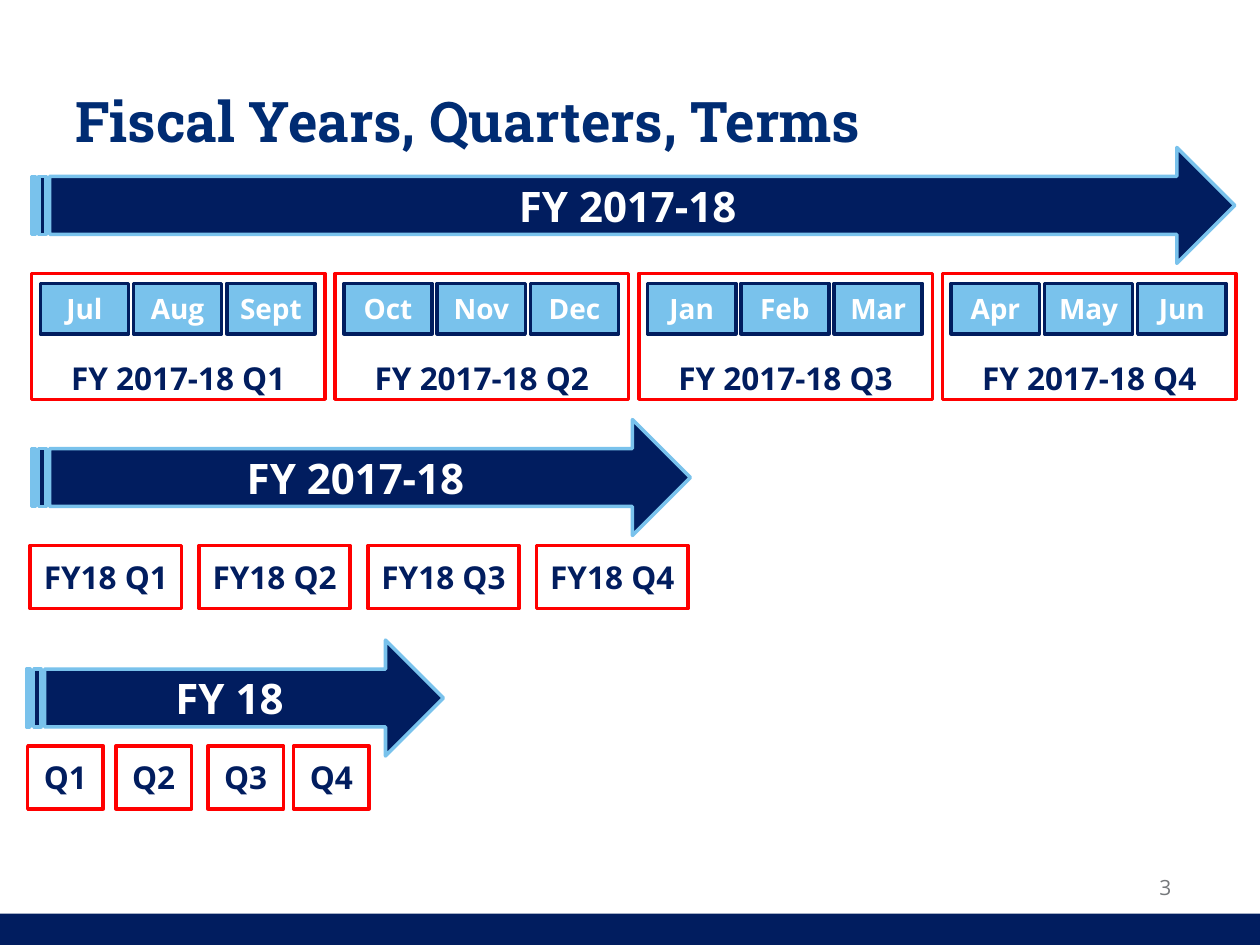
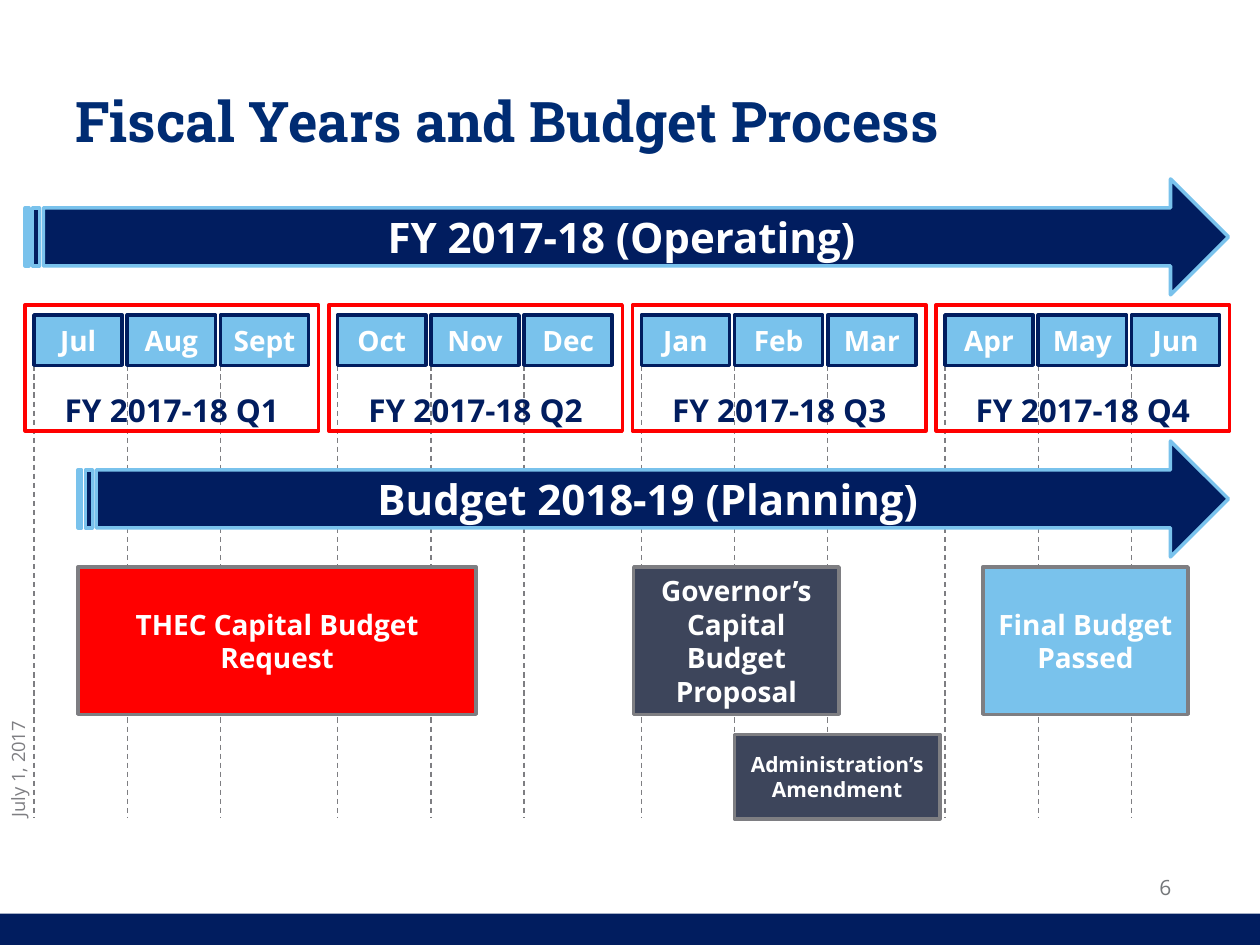
from dataclasses import dataclass

from lxml.etree import SubElement
from pptx import Presentation
from pptx.dml.color import RGBColor as RGB
from pptx.enum.dml import MSO_LINE as Dash
from pptx.enum.shapes import MSO_CONNECTOR as Conn, MSO_SHAPE as Kind
from pptx.enum.text import MSO_ANCHOR as Anchor, PP_ALIGN as Align
from pptx.oxml.ns import qn
from pptx.util import Inches, Pt


@dataclass(frozen=True)
class Theme:
    # Colours
    navy: str = "011D5F"
    title: str = "002C73"
    sky: str = "79C2EC"
    red: str = "FF0000"
    slate: str = "3D455B"
    grey: str = "7E7E82"
    page: str = "75787B"
    white: str = "FFFFFF"
    # Fonts and type sizes
    head: str = "Roboto Slab"
    body: str = "Open Sans"
    title_pt: float = 32
    arrow_pt: float = 24
    label_pt: float = 18
    month_pt: float = 16
    small_pt: float = 12
    date_pt: float = 10.5
    # Line widths
    edge: float = 2
    thin: float = 0.75


T = Theme()
QUARTERS = (
    ("Jul", "Aug", "Sept"),
    ("Oct", "Nov", "Dec"),
    ("Jan", "Feb", "Mar"),
    ("Apr", "May", "Jun"),
)
QUARTER_STEP = 2.41
MONTH_STEP = 0.74
MONTH_INSET = 0.07


def tint(hue):
    return RGB.from_string(hue)


def write(shape, text, size, hue, bold=True, font=T.body,
          align=Align.CENTER, anchor=Anchor.MIDDLE):
    frame = shape.text_frame
    frame.word_wrap = True
    frame.vertical_anchor = anchor
    para = frame.paragraphs[0]
    para.text = text
    para.alignment = align
    para.font.name = font
    para.font.size = Pt(size)
    para.font.bold = bold
    para.font.color.rgb = tint(hue)


def add_text(slide, box, text, size, hue, **style):
    shape = slide.shapes.add_textbox(*map(Inches, box))
    write(shape, text, size, hue, **style)
    return shape


def add_box(slide, box, fill=None, line=None, kind=Kind.RECTANGLE):
    shape = slide.shapes.add_shape(kind, *map(Inches, box))
    shape.shadow.inherit = False
    if fill:
        shape.fill.solid()
        shape.fill.fore_color.rgb = tint(fill)
    else:
        shape.fill.background()
    if line:
        shape.line.color.rgb = tint(line)
        shape.line.width = Pt(T.edge)
    else:
        shape.line.fill.background()
    return shape


def add_arrow(slide, left, top, width, text):
    shape = add_box(slide, (left, top, width, 0.92), T.navy, T.sky,
                    Kind.STRIPED_RIGHT_ARROW)
    write(shape, text, T.arrow_pt, T.white)


def add_label(slide, box, text):
    shape = add_box(slide, box, line=T.red)
    write(shape, text, T.label_pt, T.navy)
    return shape


def add_phase(slide, box, text, fill, size=T.month_pt):
    write(add_box(slide, box, fill, T.grey), text, size, T.white)


def add_dash(slide, x, top, end):
    line = slide.shapes.add_connector(
        Conn.STRAIGHT, *map(Inches, (x, top, x, end)))
    line.line.color.rgb = tint(T.grey)
    line.line.width = Pt(T.thin)
    line.line.dash_style = Dash.DASH
    SubElement(line._element.spPr, qn("a:effectLst"))


def month_x(left, quarter, month):
    return left + MONTH_INSET + quarter * QUARTER_STEP + month * MONTH_STEP


def add_year(slide, left, top):
    """Draw four quarter frames, each holding its three months."""
    for q, months in enumerate(QUARTERS):
        box = (left + q * QUARTER_STEP, top, 2.33, 1)
        frame = add_label(slide, box, f"FY 2017-18 Q{q + 1}").text_frame
        frame.vertical_anchor = Anchor.BOTTOM
        frame.margin_bottom = Inches(0.02)
        for m, name in enumerate(months):
            cell = (month_x(left, q, m), top + 0.08, 0.7, 0.4)
            write(add_box(slide, cell, T.sky, T.navy), name,
                  T.month_pt, T.white)


def add_base(deck, title, page):
    slide = deck.slides.add_slide(deck.slide_layouts[6])
    add_box(slide, (0, 7.25, 10, 0.25), T.navy)
    add_text(slide, (9, 6.83, 0.5, 0.42), page, T.small_pt, T.page,
             bold=False)
    add_text(slide, (0.5, 0.33, 9, 1.25), title, T.title_pt, T.title,
             font=T.head, align=Align.LEFT)
    return slide


def build_terms(deck):
    slide = add_base(deck, "Fiscal Years, Quarters, Terms", "3")

    # Full names
    add_year(slide, 0.25, 2.17)
    add_arrow(slide, 0.25, 1.17, 9.55, "FY 2017-18")

    # Shorter names
    for q in range(4):
        add_label(slide, (0.24 + q * 1.34, 4.33, 1.2, 0.5), f"FY18 Q{q + 1}")
    add_arrow(slide, 0.25, 3.33, 5.23, "FY 2017-18")

    # Shortest names
    for q, x in enumerate((0.22, 0.92, 1.65, 2.33), 1):
        add_label(slide, (x, 5.92, 0.6, 0.5), f"Q{q}")
    add_arrow(slide, 0.21, 5.08, 3.31, "FY 18")


def build_process(deck):
    slide = add_base(deck, "Fiscal Years and Budget Process", "6")
    left = 0.2

    # Month guides, behind everything else
    for q in range(4):
        for m in range(3):
            add_dash(slide, month_x(left, q, m), 2.9, 6.49)

    # Operating year and planning year
    add_year(slide, left, 2.42)
    add_arrow(slide, left, 1.42, 9.55, "FY 2017-18 (Operating)")
    add_arrow(slide, 0.62, 3.5, 9.13, "Budget 2018-19 (Planning)")

    # Budget phases
    add_phase(slide, (0.62, 4.5, 3.16, 1.17),
              "THEC Capital Budget Request", T.red)
    add_phase(slide, (5.03, 4.5, 1.63, 1.17),
              "Governor’s Capital Budget Proposal", T.slate)
    add_phase(slide, (7.8, 4.5, 1.63, 1.17), "Final Budget Passed", T.sky)
    add_phase(slide, (5.83, 5.83, 1.63, 0.67),
              "Administration’s Amendment", T.slate, T.small_pt)

    # Start date
    date = add_text(slide, (-0.56, 5.73, 1.42, 0.29), "July 1, 2017",
                    T.date_pt, T.grey, bold=False, align=Align.LEFT,
                    anchor=Anchor.TOP)
    date.rotation = 270


def main():
    deck = Presentation()
    deck.slide_width = Inches(10)
    deck.slide_height = Inches(7.5)
    build_terms(deck)
    build_process(deck)
    deck.save("out.pptx")


if __name__ == "__main__":
    main()
